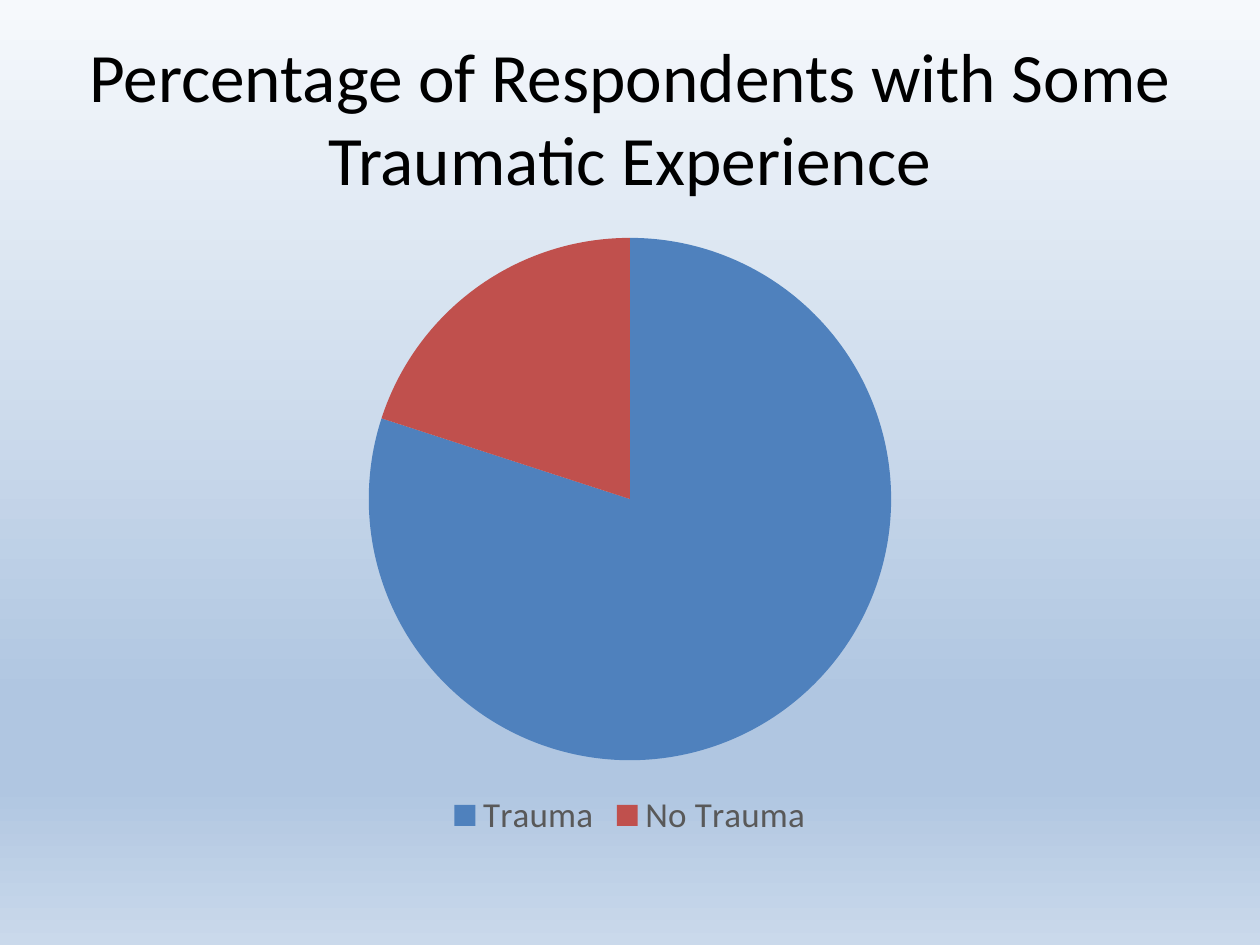
from lxml import etree
from pptx import Presentation
from pptx.chart.data import CategoryChartData
from pptx.dml.color import RGBColor
from pptx.enum import chart as charts, text
from pptx.oxml.ns import qn
from pptx.util import Inches, Pt

FONT = "Calibri"
BLACK = RGBColor(0x00, 0x00, 0x00)
GRAY = RGBColor(0x59, 0x59, 0x59)
BLUE = RGBColor(0x4F, 0x81, 0xBD)
RED = RGBColor(0xC0, 0x50, 0x4D)
BACKGROUND_STOPS = [
    (0, RGBColor(0xF6, 0xF9, 0xFC)),
    (74, RGBColor(0xB0, 0xC6, 0xE1)),
    (83, RGBColor(0xB0, 0xC6, 0xE1)),
    (100, RGBColor(0xCA, 0xD9, 0xEB)),
]
RESPONSES = [("Trauma", 80, BLUE), ("No Trauma", 20, RED)]


def paint_background(slide):
    """Fill the slide with a gradient running from top to bottom."""
    fill = slide.background.fill
    fill.gradient()
    fill.gradient_angle = 270  # counter-clockwise, so downwards
    stop_list = slide.element.find(".//" + qn("a:gsLst"))
    for stop in list(stop_list):
        stop_list.remove(stop)
    for percent, color in BACKGROUND_STOPS:
        stop = etree.SubElement(stop_list, qn("a:gs"), pos=str(percent * 1000))
        etree.SubElement(stop, qn("a:srgbClr"), val=str(color))


def place_title(slide, left, top, width, height):
    title = slide.shapes.title
    title.left, title.top, title.width, title.height = left, top, width, height
    frame = title.text_frame
    frame.text = "Percentage of Respondents with Some Traumatic Experience"
    frame.word_wrap = True
    frame.auto_size = text.MSO_AUTO_SIZE.NONE
    frame.vertical_anchor = text.MSO_ANCHOR.MIDDLE
    paragraph = frame.paragraphs[0]
    paragraph.alignment = text.PP_ALIGN.CENTER
    paragraph.font.name = FONT
    paragraph.font.size = Pt(39.6)
    paragraph.font.color.rgb = BLACK


def add_response_pie(slide, left, top, width, height):
    data = CategoryChartData()
    data.categories = [name for name, _, _ in RESPONSES]
    data.add_series("Series 1", [value for _, value, _ in RESPONSES])
    chart = slide.shapes.add_chart(
        charts.XL_CHART_TYPE.PIE, left, top, width, height, data
    ).chart
    chart.has_title = False
    chart.font.name = FONT
    chart.font.size = Pt(10)
    chart.font.color.rgb = BLACK

    # Slices
    plot = chart.plots[0]
    plot.vary_by_categories = True
    for index, (_, _, color) in enumerate(RESPONSES):
        slice_format = plot.series[0].points[index].format
        slice_format.fill.solid()
        slice_format.fill.fore_color.rgb = color
        slice_format.line.fill.background()

    # Legend
    chart.has_legend = True
    legend = chart.legend
    legend.position = charts.XL_LEGEND_POSITION.BOTTOM
    legend.include_in_layout = False
    legend.font.name = FONT
    legend.font.size = Pt(20)
    legend.font.color.rgb = GRAY


def main():
    presentation = Presentation()
    presentation.slide_width = Inches(10)
    presentation.slide_height = Inches(7.5)
    slide = presentation.slides.add_slide(presentation.slide_layouts[5])
    paint_background(slide)
    place_title(slide, Inches(0.5), Inches(0.3), Inches(9), Inches(1.25))
    add_response_pie(slide, Inches(0.5), Inches(1.75), Inches(9), Inches(4.95))
    presentation.save("out.pptx")


if __name__ == "__main__":
    main()
